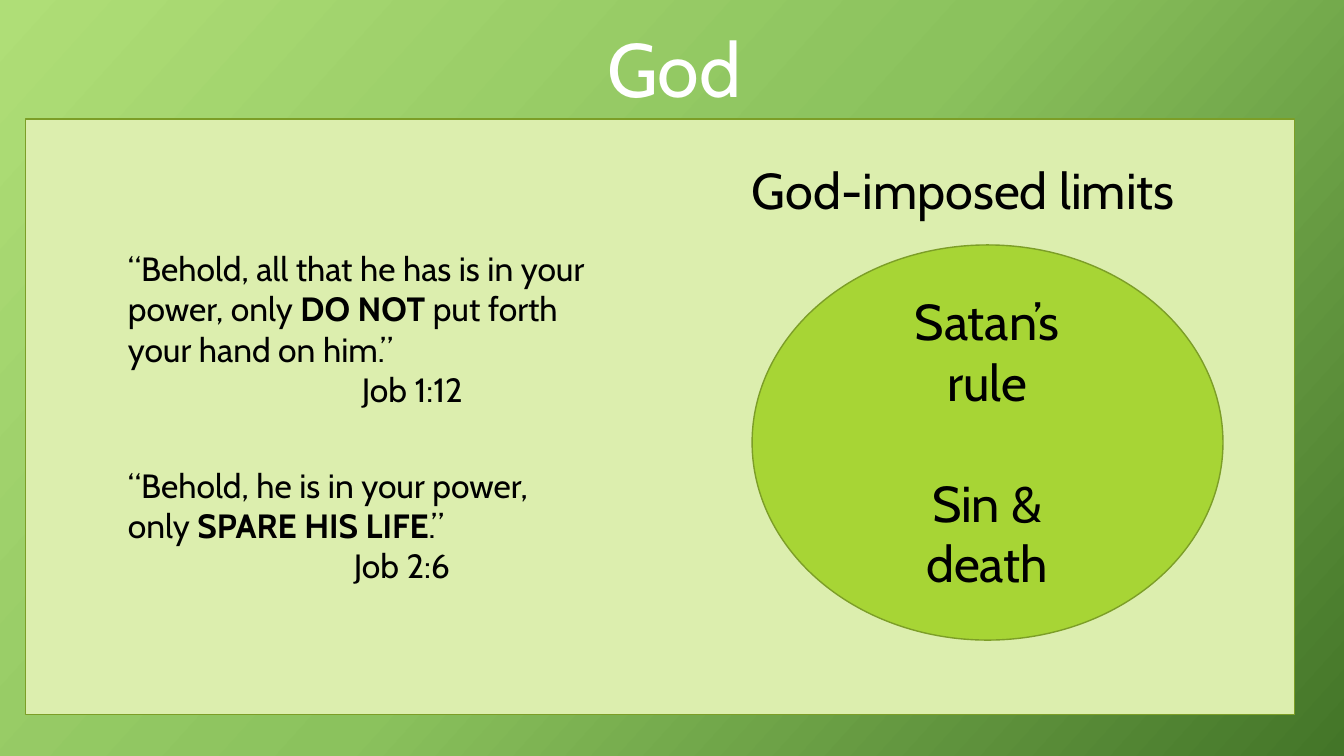
import pptx
import pptx.util
import pptx.dml.color
import pptx.enum.shapes
import pptx.enum.text
from lxml import etree

Inches, Pt = pptx.util.Inches, pptx.util.Pt
RGBColor = pptx.dml.color.RGBColor
SHAPE = pptx.enum.shapes.MSO_SHAPE
ALIGN = pptx.enum.text.PP_ALIGN

# Content: a paragraph is a list of (words, bold) runs
title = [[("God", False)]]
limits = [[("God-imposed limits", False)]]
rule = [[("Satan’s rule", False)]]
outcome = [[("Sin &", False)], [("death", False)]]
quotes = [
    {"words": [("“Behold, all that he has is in your power, only ", False),
               ("DO NOT ", True),
               ("put forth your hand on him.”", False)],
     "verse": "Job 1:12", "indent": 2.32, "place": (1.17, 2.41, 5.16, 1.72)},
    {"words": [("“Behold, he is in your power, only ", False),
               ("SPARE HIS LIFE", True),
               (".”", False)],
     "verse": "Job 2:6", "indent": 2.24, "place": (1.17, 4.56, 4.75, 1.32)},
]

# Colours and font
FONT = "Cabin"
WHITE = RGBColor(0xFF, 0xFF, 0xFF)
BLACK = RGBColor(0x00, 0x00, 0x00)
PALE = RGBColor(0xDC, 0xEE, 0xAE)
LIME = RGBColor(0xA7, 0xD5, 0x35)
OLIVE = RGBColor(0x7C, 0x9E, 0x27)
BACKDROP = [(0, RGBColor(0xAF, 0xDE, 0x77)),
            (50, RGBColor(0x8B, 0xC2, 0x5D)),
            (100, RGBColor(0x43, 0x75, 0x28))]
BACKDROP_ANGLE = 42

deck = pptx.Presentation()
deck.slide_width, deck.slide_height = Inches(13.33), Inches(7.5)
slide = deck.slides.add_slide(deck.slide_layouts[6])


def add_text(paragraphs, place, size, color=BLACK, align=ALIGN.LEFT,
             wrap=True, gaps=None, indents=None):
    """Write paragraphs; gaps (pt) and indents (in) are keyed by paragraph index."""
    frame = slide.shapes.add_textbox(*map(Inches, place)).text_frame
    frame.word_wrap = wrap
    for i, runs in enumerate(paragraphs):
        paragraph = frame.paragraphs[0] if i == 0 else frame.add_paragraph()
        paragraph.alignment = align
        if gaps and i in gaps:
            paragraph.space_before = Pt(gaps[i])
        if indents and i in indents:
            properties = paragraph._p.get_or_add_pPr()
            properties.set("marL", str(Inches(indents[i])))
            properties.set("indent", "0")
        for words, bold in runs:
            run = paragraph.add_run()
            run.text = words
            run.font.name, run.font.size = FONT, Pt(size)
            run.font.bold = bold
            run.font.color.rgb = color


def add_area(preset, place, fill):
    area = slide.shapes.add_shape(preset, *map(Inches, place))
    area.shadow.inherit = False
    area.fill.solid()
    area.fill.fore_color.rgb = fill
    area.line.color.rgb = OLIVE
    area.line.width = Pt(1)


# Background gradient with three stops
backdrop = slide.background.fill
backdrop.gradient()
backdrop.gradient_angle = 360 - BACKDROP_ANGLE
A = "{http://schemas.openxmlformats.org/drawingml/2006/main}"
stops = next(slide._element.iter(A + "gsLst"))
for old_stop in list(stops):
    stops.remove(old_stop)
for percent, color in BACKDROP:
    stop = etree.SubElement(stops, A + "gs", pos=str(percent * 1000))
    etree.SubElement(stop, A + "srgbClr", val=str(color))

# God's realm
add_area(SHAPE.RECTANGLE, (0.25, 1.18, 12.59, 5.91), PALE)
add_text(title, (5.92, 0.17, 1.54, 1.01), 54, WHITE, ALIGN.CENTER, wrap=False)

# Satan's rule inside its limits; the gap is one line of text
add_area(SHAPE.OVAL, (7.46, 2.43, 4.67, 3.92), LIME)
add_text(rule + outcome, (8.79, 2.83, 2, 3.13), 36, align=ALIGN.CENTER,
         gaps={len(rule): 43.5})
add_text(limits, (7.36, 1.53, 4.87, 0.71), 36)

# Quotes with their verses
for quote in quotes:
    add_text([quote["words"], [(quote["verse"], False)]], quote["place"], 24,
             indents={1: quote["indent"]})

deck.save("out.pptx")
